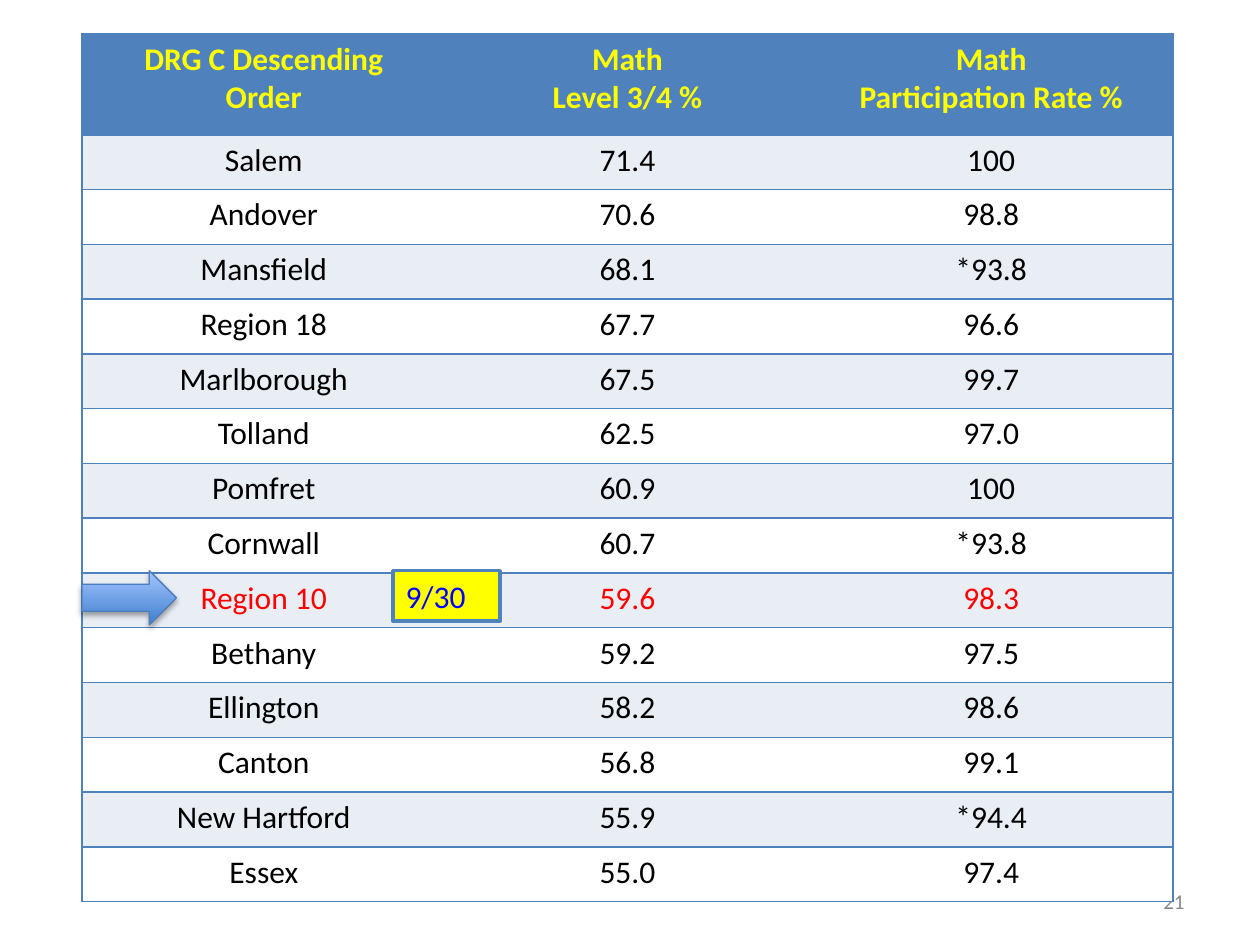
from lxml import etree
from pptx import Presentation
from pptx import util as u
from pptx.dml.color import RGBColor
from pptx.enum import shapes, text
from pptx.oxml import parse_xml
from pptx.oxml.ns import nsdecls, qn

BLUE = RGBColor(0x4F, 0x81, 0xBD)
BAND = RGBColor(0xE9, 0xED, 0xF4)
WHITE = RGBColor(0xFF, 0xFF, 0xFF)
BLACK = RGBColor(0x00, 0x00, 0x00)
RED = RGBColor(0xFF, 0x00, 0x00)
YELLOW = RGBColor(0xFF, 0xFF, 0x00)
RANK_BLUE = RGBColor(0x00, 0x00, 0xFF)
GRAY = RGBColor(0x89, 0x89, 0x89)
ARROW_DARK = RGBColor(0x3F, 0x80, 0xCE)
ARROW_LIGHT = RGBColor(0xA4, 0xC4, 0xFF)
ARROW_EDGE = RGBColor(0x4B, 0x7E, 0xBC)

HIGHLIGHTED = "Region 10"
HEADINGS = ("DRG C Descending\nOrder", "Math\nLevel 3/4 %",
            "Math\nParticipation Rate %")
DISTRICTS = (
    ("Salem", "71.4", "100"),
    ("Andover", "70.6", "98.8"),
    ("Mansfield", "68.1", "*93.8"),
    ("Region 18", "67.7", "96.6"),
    ("Marlborough", "67.5", "99.7"),
    ("Tolland", "62.5", "97.0"),
    ("Pomfret", "60.9", "100"),
    ("Cornwall", "60.7", "*93.8"),
    (HIGHLIGHTED, "59.6", "98.3"),
    ("Bethany", "59.2", "97.5"),
    ("Ellington", "58.2", "98.6"),
    ("Canton", "56.8", "99.1"),
    ("New Hartford", "55.9", "*94.4"),
    ("Essex", "55.0", "97.4"),
)

TABLE_LEFT, TABLE_TOP, TABLE_WIDTH, TABLE_HEIGHT = 0.65, 0.27, 8.66, 6.89
HEADING_HEIGHT = 0.8


def write(frame, words, align, color, size=18, bold=False):
    """Fill a text frame, one paragraph per line of words."""
    frame.text = words
    style = {"name": "Calibri", "size": u.Pt(size), "bold": bold}
    for paragraph in frame.paragraphs:
        paragraph.alignment = align
        for run in paragraph.runs:
            for attribute, value in style.items():
                setattr(run.font, attribute, value)
            run.font.color.rgb = color


def set_borders(cell, ruled_sides):
    """Rule the given sides of a cell and clear the others."""
    properties = cell._tc.get_or_add_tcPr()
    for position, side in enumerate("LRTB"):
        border = etree.Element(qn(f"a:ln{side}"), w=str(u.Pt(1)))
        if side in ruled_sides:
            fill = etree.SubElement(border, qn("a:solidFill"))
            etree.SubElement(fill, qn("a:srgbClr"), val=str(BLUE))
        else:
            etree.SubElement(border, qn("a:noFill"))
        properties.insert(position, border)


def add_ranking(slide):
    rows = (HEADINGS,) + DISTRICTS
    ranking = slide.shapes.add_table(
        len(rows), len(HEADINGS), u.Inches(TABLE_LEFT), u.Inches(TABLE_TOP),
        u.Inches(TABLE_WIDTH), u.Inches(TABLE_HEIGHT)).table
    district_height = (TABLE_HEIGHT - HEADING_HEIGHT) / len(DISTRICTS)

    for index, row in enumerate(rows):
        heading = index == 0
        ranking.rows[index].height = u.Inches(
            HEADING_HEIGHT if heading else district_height)
        if heading:
            fill, ink = BLUE, YELLOW
        else:
            fill = BAND if index % 2 else WHITE
            ink = RED if row[0] == HIGHLIGHTED else BLACK
        for column, words in enumerate(row):
            cell = ranking.cell(index, column)
            cell.fill.solid()
            cell.fill.fore_color.rgb = fill
            write(cell.text_frame, words, text.PP_ALIGN.CENTER, ink, bold=heading)
            set_borders(cell, ("LTB", "TB", "RTB")[column])


def add_rank_label(slide):
    label = slide.shapes.add_shape(
        shapes.MSO_SHAPE.RECTANGLE,
        u.Inches(3.12), u.Inches(4.53), u.Inches(0.85), u.Inches(0.4))
    label.shadow.inherit = False
    label.fill.solid()
    label.fill.fore_color.rgb = YELLOW
    label.line.color.rgb = BLUE
    label.line.width = u.Pt(2)
    label.text_frame.word_wrap = True
    label.text_frame.vertical_anchor = text.MSO_ANCHOR.TOP
    write(label.text_frame, "9/30", text.PP_ALIGN.LEFT, RANK_BLUE)


def add_pointer(slide):
    pointer = slide.shapes.add_shape(
        shapes.MSO_SHAPE.RIGHT_ARROW,
        u.Inches(TABLE_LEFT), u.Inches(4.53), u.Inches(0.75), u.Inches(0.43))
    pointer.line.color.rgb = ARROW_EDGE
    pointer.line.width = u.Pt(0.75)
    pointer.fill.gradient()
    pointer.fill.gradient_angle = 90
    for stop, color, position in zip(
            pointer.fill.gradient_stops, (ARROW_DARK, ARROW_LIGHT), (0, 1)):
        stop.color.rgb = color
        stop.position = position
    # Soft shadow straight below
    pointer._element.spPr.append(parse_xml(
        f'<a:effectLst {nsdecls("a")}>'
        f'<a:outerShdw blurRad="{u.Pt(3.1)}" dist="{u.Pt(1.8)}" dir="5400000" '
        'rotWithShape="0"><a:srgbClr val="000000"><a:alpha val="35000"/>'
        '</a:srgbClr></a:outerShdw></a:effectLst>'))


def add_page_number(slide):
    page = slide.shapes.add_textbox(
        u.Inches(7.17), u.Inches(6.95), u.Inches(2.33), u.Inches(0.4))
    page.text_frame.word_wrap = True
    page.text_frame.vertical_anchor = text.MSO_ANCHOR.MIDDLE
    write(page.text_frame, "21", text.PP_ALIGN.RIGHT, GRAY, size=12)


def main():
    deck = Presentation()
    deck.slide_width, deck.slide_height = u.Inches(10), u.Inches(7.5)
    slide = deck.slides.add_slide(deck.slide_layouts[6])
    # From back to front: the table covers part of the page number
    add_page_number(slide)
    add_ranking(slide)
    add_rank_label(slide)
    add_pointer(slide)
    deck.save("out.pptx")


if __name__ == "__main__":
    main()
